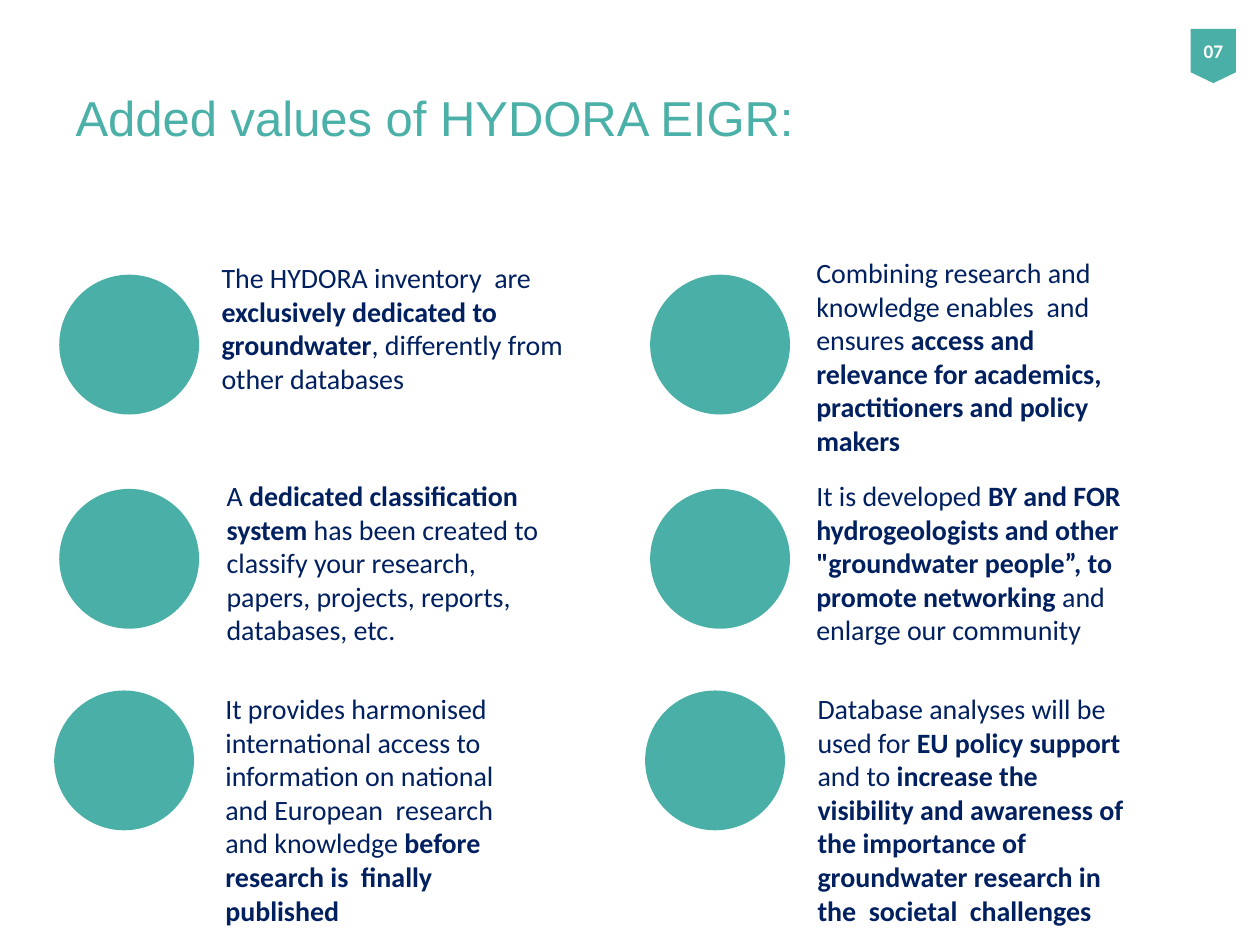
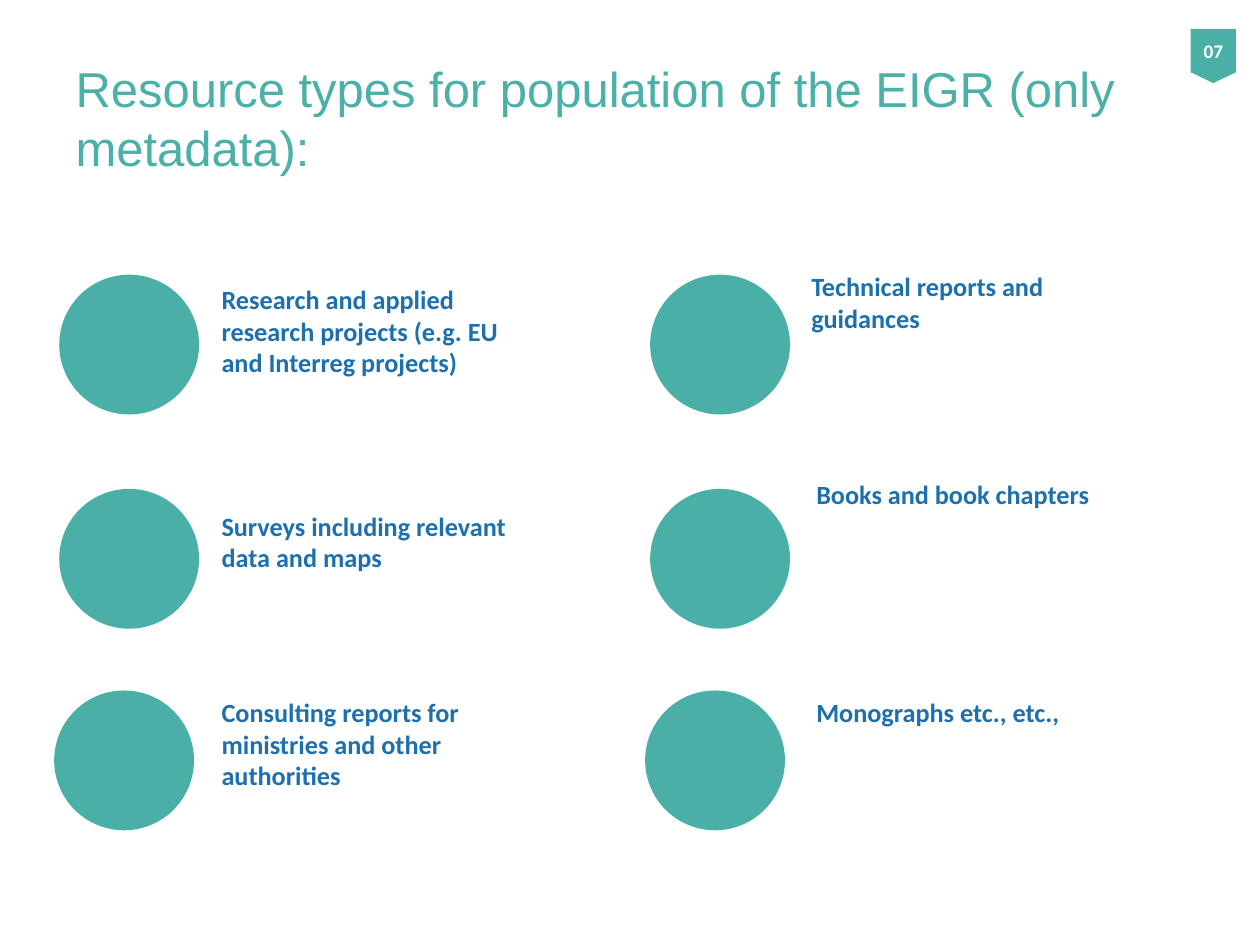
import pptx
import pptx.dml.color
import pptx.enum.shapes
import pptx.enum.text
import pptx.util

Inches = pptx.util.Inches
Shape = pptx.enum.shapes.MSO_SHAPE
Align = pptx.enum.text.PP_ALIGN
Anchor = pptx.enum.text.MSO_ANCHOR

COLORS = {
    "title": "4BB1A8",
    "teal": "4AB0A7",
    "navy": "002060",
    "blue": "1D70AF",
    "white": "FFFFFF",
}

PAGE_NUMBER = "07"
CIRCLE_SIZE = 1.11
COLUMN_LEFT = 0.47
COLUMN_STEP = 4.69
ROWS = [(0, 2.18), (0, 3.88), (-0.04, 5.48)]
TEXT_WIDTH = 2.71
TEXT_HEIGHT = 1.3

ADDED_VALUES = [
    (1.66, 2.02, 3.11, "The HYDORA inventory  are *exclusively dedicated to groundwater*, "
                       "differently from other databases"),
    (6.38, 1.98, TEXT_WIDTH, "Combining research and knowledge enables  and ensures *access and "
                             "relevance for academics, practitioners and policy makers*"),
    (1.7, 3.75, TEXT_WIDTH, "A *dedicated classification system *has been created to classify "
                            "your research, papers, projects, reports, databases, etc."),
    (6.38, 3.75, TEXT_WIDTH, "It is developed *BY and FOR hydrogeologists and other \"groundwater "
                             "people”, to promote networking *and enlarge our community"),
    (1.69, 5.44, TEXT_WIDTH, "It provides harmonised international access to information on "
                             "national  and European  research and knowledge *before research "
                             "is  finally published*"),
    (6.39, 5.44, TEXT_WIDTH, "Database analyses will be used for *EU policy support*\n"
                             "and to *increase the visibility and awareness of the importance "
                             "of groundwater research in the  societal  challenges*"),
]

RESOURCE_TYPES = [
    (1.66, 2.2, TEXT_WIDTH, "*Research and applied research projects (e.g. EU and Interreg projects)*"),
    (6.34, 2.1, TEXT_WIDTH, "*Technical reports and guidances*"),
    (1.66, 4, TEXT_WIDTH, "*Surveys including relevant data and maps*"),
    (6.38, 3.75, TEXT_WIDTH, "*Books and book chapters*"),
    (1.66, 5.48, TEXT_WIDTH, "*Consulting reports for ministries and other authorities*"),
    (6.38, 5.48, TEXT_WIDTH, "*Monographs etc., etc.,*"),
]


def rgb(name):
    return pptx.dml.color.RGBColor.from_string(COLORS[name])


def write_text(shape, text, *, size, color, font="Calibri", align=Align.LEFT, anchor=Anchor.TOP):
    """Stretches between asterisks are bold; each line is a paragraph."""
    frame = shape.text_frame
    frame.word_wrap = True
    frame.auto_size = pptx.enum.text.MSO_AUTO_SIZE.NONE
    frame.vertical_anchor = anchor
    for index, line in enumerate(text.split("\n")):
        paragraph = frame.add_paragraph() if index else frame.paragraphs[0]
        paragraph.alignment = align
        for part, piece in enumerate(line.split("*")):
            if piece:
                run = paragraph.add_run()
                run.text = piece
                run.font.name = font
                run.font.size = pptx.util.Pt(size)
                run.font.bold = part % 2 == 1
                run.font.color.rgb = rgb(color)


def add_teal_shape(slide, kind, left, top, width, height):
    shape = slide.shapes.add_shape(kind, Inches(left), Inches(top), Inches(width), Inches(height))
    shape.shadow.inherit = False
    shape.fill.solid()
    shape.fill.fore_color.rgb = rgb("teal")
    shape.line.fill.background()
    return shape


def add_title(slide, text):
    title = slide.shapes.title
    title.left, title.top = Inches(0.5), Inches(0.54)
    title.width, title.height = Inches(9), Inches(0.78)
    write_text(title, text, size=28, color="title", font="Arial", anchor=Anchor.MIDDLE)


def add_page_badge(slide):
    badge = add_teal_shape(slide, Shape.FLOWCHART_OFFPAGE_CONNECTOR, 9.45, 0.23, 0.36, 0.43)
    write_text(badge, f"*{PAGE_NUMBER}*", size=11, color="white",
               align=Align.CENTER, anchor=Anchor.MIDDLE)


def add_circles(slide):
    for shift, top in ROWS:
        for column in range(2):
            left = COLUMN_LEFT + column * COLUMN_STEP + shift
            add_teal_shape(slide, Shape.OVAL, left, top, CIRCLE_SIZE, CIRCLE_SIZE)


def add_circle_slide(presentation, title, entries, *, size, color):
    slide = presentation.slides.add_slide(presentation.slide_layouts.get_by_name("Title Only"))
    add_title(slide, title)
    add_page_badge(slide)
    add_circles(slide)
    for left, top, width, text in entries:
        box = slide.shapes.add_textbox(Inches(left), Inches(top), Inches(width), Inches(TEXT_HEIGHT))
        write_text(box, text, size=size, color=color)


def main():
    presentation = pptx.Presentation()
    presentation.slide_width = Inches(10)
    presentation.slide_height = Inches(7.5)
    add_circle_slide(presentation, "Added values of HYDORA EIGR:", ADDED_VALUES,
                     size=16, color="navy")
    add_circle_slide(presentation, "Resource types for population of the EIGR (only metadata):",
                     RESOURCE_TYPES, size=15, color="blue")
    presentation.save("out.pptx")


if __name__ == "__main__":
    main()
